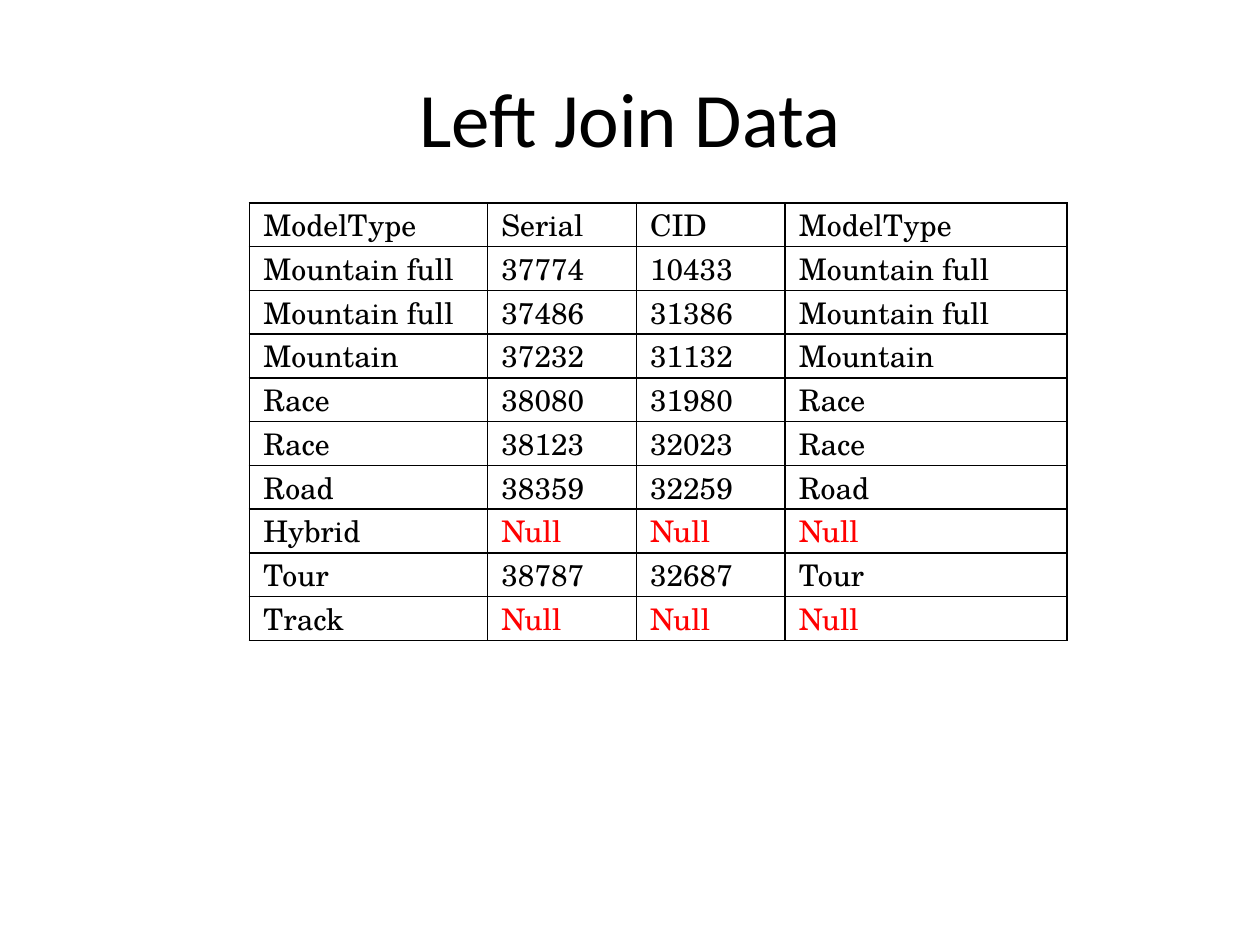
from lxml import etree
from pptx import Presentation
from pptx.dml.color import RGBColor
from pptx.enum.text import MSO_ANCHOR, PP_ALIGN
from pptx.oxml.ns import qn
from pptx.util import Inches, Pt

MID, TOP = MSO_ANCHOR.MIDDLE, MSO_ANCHOR.TOP
CENTER, LEFT = PP_ALIGN.CENTER, PP_ALIGN.LEFT
BLACK = RGBColor(0x00, 0x00, 0x00)
RED = RGBColor(0xFF, 0x00, 0x00)

WIDTH, HEIGHT = Inches(10), Inches(7.5)
TITLE_BOX = (0.05, 0.04, 0.9, 1 / 6)  # shares of the slide
TABLE_BOX = tuple(map(Inches, (1.98, 1.61, 6.49, 2.8)))
SHARES = (1.89, 1.18, 1.18, 2.24)  # relative column widths

TITLE_FONT = {"name": "Calibri", "size": Pt(44), "bold": False}
CELL_FONT = {"name": "TeX Gyre Schola", "size": Pt(17), "bold": False}
CELL_FORM = {
    "margin_left": Inches(0.11), "margin_right": Inches(0.11),
    "margin_top": 0, "margin_bottom": 0, "vertical_anchor": TOP,
}

HEAD = ("ModelType", "Serial", "CID", "ModelType")
BIKES = (
    ("Mountain full", "37774", "10433"),
    ("Mountain full", "37486", "31386"),
    ("Mountain", "37232", "31132"),
    ("Race", "38080", "31980"),
    ("Race", "38123", "32023"),
    ("Road", "38359", "32259"),
    ("Hybrid", None, None),
    ("Tour", "38787", "32687"),
    ("Track", None, None),
)


def apply(target, form):
    for key, value in form.items():
        setattr(target, key, value)


def write(frame, text, font, color, align):
    para = frame.paragraphs[0]
    para.alignment = align
    run = para.add_run()
    run.text = text
    apply(run.font, font)
    run.font.color.rgb = color


def border(cell):
    props = cell._tc.get_or_add_tcPr()
    for side in ("a:lnL", "a:lnR", "a:lnT", "a:lnB"):
        line = etree.SubElement(props, qn(side), w=str(Pt(1)))
        fill = etree.SubElement(line, qn("a:solidFill"))
        etree.SubElement(fill, qn("a:srgbClr"), val=str(BLACK))


def add_title(slide, box, text):
    title = slide.shapes.title
    left, top, width, height = box
    apply(title, {
        "left": int(left * WIDTH), "top": int(top * HEIGHT),
        "width": int(width * WIDTH), "height": int(height * HEIGHT),
    })
    title.text_frame.vertical_anchor = MID
    write(title.text_frame, text, TITLE_FONT, BLACK, CENTER)


def add_join(slide, box, rows):
    table = slide.shapes.add_table(len(rows), len(SHARES), *box).table
    apply(table, {"first_row": False, "horz_banding": False})
    for col, share in zip(table.columns, SHARES):
        col.width = int(box[2] * share / sum(SHARES))
    for line, row in zip(table.rows, rows):
        line.height = box[3] // len(rows)
        for cell, text in zip(line.cells, row):
            apply(cell, CELL_FORM)
            border(cell)
            cell.fill.background()
            color = RED if text == "Null" else BLACK
            write(cell.text_frame, text, CELL_FONT, color, LEFT)


def main():
    deck = Presentation()
    deck.slide_width, deck.slide_height = WIDTH, HEIGHT
    slide = deck.slides.add_slide(deck.slide_layouts[5])
    add_title(slide, TITLE_BOX, "Left Join Data")

    # An unmatched model has Null in every joined column
    rows = [HEAD]
    for model, serial, cid in BIKES:
        match = (serial, cid, model) if serial else ("Null",) * 3
        rows.append((model, *match))
    add_join(slide, TABLE_BOX, rows)
    deck.save("out.pptx")


if __name__ == "__main__":
    main()
